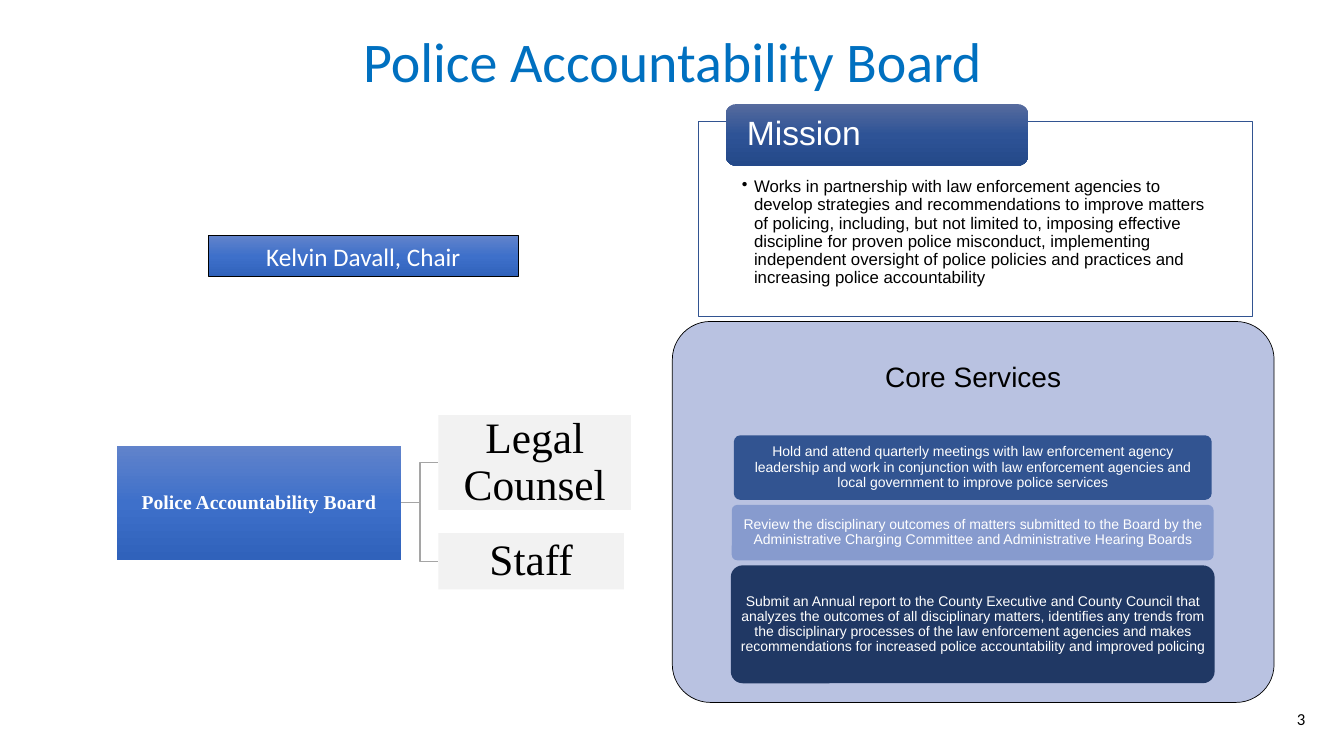
import copy
import pptx
import pptx.util
import pptx.dml.color
import pptx.enum.shapes
import pptx.enum.text
import pptx.oxml
import pptx.oxml.ns

SHAPE = pptx.enum.shapes.MSO_SHAPE
ALIGN = pptx.enum.text.PP_ALIGN
ANCHOR = pptx.enum.text.MSO_ANCHOR
RGB = pptx.dml.color.RGBColor.from_string

THEME = {
    "title": ("Calibri", 40, "0070C0"),
    "number": ("Calibri", 12, "000000"),
    "chair": ("Calibri", 18, "FFFFFF"),
    "board": ("Times New Roman", 14, "FFFFFF"),
    "unit": ("Times New Roman", 31, "000000"),
    "heading": ("Arial", 24, "FFFFFF"),
    "mission": ("Arial", 12, "000000"),
    "core": ("Arial", 20, "000000"),
    "service": ("Arial", 10, "FFFFFF"),
    "blue": ["6183CB", "3E70CA", "3062BB"],
    "navy": ["566B9E", "2E5396", "244989"],
    "services": ["325491", "879BCE", "203864"],
    "white": ["FFFFFF"],
    "grey": ["F2F2F2"],
    "panel": ["B9C2E1"],
    "edge": "325491",
    "black": "000000",
    "link": "A5A5A5",
}

prs = pptx.Presentation()
prs.slide_width = pptx.util.Inches(13.33)
prs.slide_height = pptx.util.Inches(7.5)
CELL = prs.slide_width / 40
slide = prs.slides.add_slide(prs.slide_layouts[6])


def box(kind, at, fill, line=None, corner=None):
    sp = slide.shapes.add_shape(kind, *[round(v * CELL) for v in at])
    sp.shadow.inherit = False
    if corner is not None:
        sp.adjustments[0] = corner
    if len(fill) == 1:
        sp.fill.solid()
        sp.fill.fore_color.rgb = RGB(fill[0])
    else:
        sp.fill.gradient()
        sp.fill.gradient_angle = 270
        stops = sp.fill.gradient_stops
        last = stops[1]._gs
        last.addnext(copy.deepcopy(last))
        for i, stop in enumerate(sp.fill.gradient_stops):
            stop.position = i / (len(fill) - 1)
            stop.color.rgb = RGB(fill[i])
    if line:
        sp.line.color.rgb = RGB(line)
        sp.line.width = pptx.util.Pt(0.5)
    else:
        sp.line.fill.background()
    return sp


def write(sp, text, style, insets=(0.3, 0.15, 0.3, 0.15), align=ALIGN.CENTER,
          anchor=ANCHOR.MIDDLE, spacing=0.9, bold=False):
    tf = sp.text_frame
    tf.word_wrap = True
    tf.vertical_anchor = anchor
    tf.margin_left, tf.margin_top, tf.margin_right, tf.margin_bottom = [
        round(v * CELL) for v in insets]
    p = tf.paragraphs[0]
    p.text = text
    p.alignment = align
    p.line_spacing = spacing
    font = p.runs[0].font
    font.name, size, color = THEME[style]
    font.size = pptx.util.Pt(size)
    font.color.rgb = RGB(color)
    font.bold = bold
    return p


labels = [
    ("Police Accountability Board", "title", (4.53, 0.75, 30.96, 2.34), ALIGN.CENTER),
    ("3", "number", (28.65, 20.85, 10.5, 1.2), ALIGN.RIGHT),
]
for text, style, at, align in labels:
    sp = slide.shapes.add_textbox(*[round(v * CELL) for v in at])
    write(sp, text, style, align=align)

sp = box(SHAPE.RECTANGLE, (20.79, 3.6, 16.47, 5.82), THEME["white"], THEME["edge"])
p = write(sp, "Works in partnership with law enforcement agencies to develop strategies and "
          "recommendations to improve matters of policing, including, but not limited to, "
          "imposing effective discipline for proven police misconduct, implementing "
          "independent oversight of police policies and practices and increasing police "
          "accountability", "mission", (1.29, 1.71, 1.29, 0.27), ALIGN.LEFT, ANCHOR.TOP)
pPr = p._p.get_or_add_pPr()
pPr.set("marL", str(pptx.util.Inches(0.12)))
pPr.set("indent", str(-pptx.util.Inches(0.12)))
bullet = pptx.oxml.parse_xml(
    '<a:buChar %s char="•"/>' % pptx.oxml.ns.nsdecls("a"))
pPr.append(bullet)

sp = box(SHAPE.ROUNDED_RECTANGLE, (21.6, 3.1, 9, 1.83), THEME["navy"])
write(sp, "Mission", "heading", (0.54, 0, 0.54, 0), ALIGN.LEFT)

board = box(SHAPE.RECTANGLE, (3.48, 13.27, 8.46, 3.39), THEME["blue"])
write(board, "Police Accountability Board", "board", (0.03,) * 4, bold=True)

units = [
    ("Legal Counsel", (13.05, 12.36, 5.73, 2.82)),
    ("Staff", (13.05, 15.87, 5.52, 1.68)),
]
for text, at in units:
    unit = box(SHAPE.RECTANGLE, at, THEME["grey"])
    write(unit, text, "unit", (0.06,) * 4)
    link = slide.shapes.add_connector(pptx.enum.shapes.MSO_CONNECTOR.ELBOW, 0, 0, 0, 0)
    link.begin_connect(board, 3)
    link.end_connect(unit, 1)
    link.line.color.rgb = RGB(THEME["link"])
    link.line.width = pptx.util.Pt(1)
    link._element.spPr.append(pptx.oxml.parse_xml(
        "<a:effectLst %s/>" % pptx.oxml.ns.nsdecls("a")))

sp = box(SHAPE.ROUNDED_RECTANGLE, (20.01, 9.57, 17.91, 11.34), THEME["panel"],
         THEME["black"], 0.1)
write(sp, "Core Services", "core", (0.24, 0.24, 0.24, 8.19))

services = [
    (14.22, 1.92, "Hold and attend quarterly meetings with law enforcement agency leadership "
     "and work in conjunction with law enforcement agencies and local government to improve "
     "police services"),
    (14.34, 1.65, "Review the disciplinary outcomes of matters submitted to the Board by the "
     "Administrative Charging Committee and Administrative Hearing Boards"),
    (14.4, 3.51, "Submit an Annual report to the County Executive and County Council that "
     "analyzes the outcomes of all disciplinary matters, identifies any trends from the "
     "disciplinary processes of the law enforcement agencies and makes recommendations for "
     "increased police accountability and improved policing"),
]
center, top, gap = 28.95, 12.96, 0.15
for (width, height, text), color in zip(services, THEME["services"]):
    sp = box(SHAPE.ROUNDED_RECTANGLE, (center - width / 2, top, width, height), [color],
             corner=0.1)
    write(sp, text, "service", (0.12,) * 4)
    top += height + gap

sp = box(SHAPE.RECTANGLE, (6.21, 7.02, 9.21, 1.22), THEME["blue"], THEME["black"])
write(sp, "Kelvin Davall, Chair", "chair", spacing=1.0)

prs.save("out.pptx")
